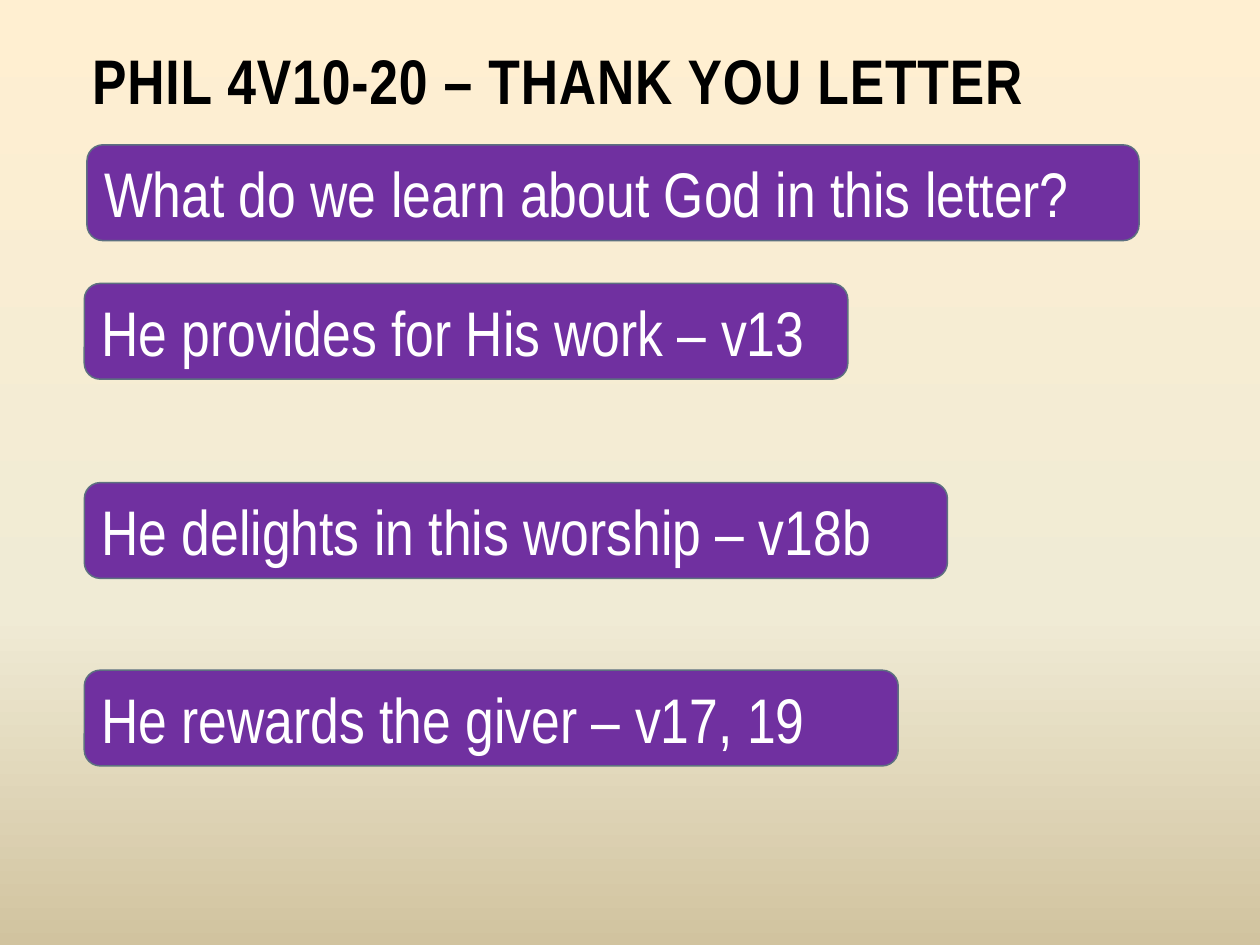
"""Builds the Philippians 4 thank-you letter slide."""
from copy import deepcopy

from pptx import Presentation
from pptx.dml.color import RGBColor as Color
from pptx.enum.shapes import MSO_SHAPE as Shape
from pptx.enum.text import MSO_ANCHOR as Anchor, PP_ALIGN as Align
from pptx.util import Pt

TITLE = "PHIL 4V10-20 – THANK YOU LETTER"
TITLE_BOX = (45.4, 15.1, 624.2, 55.4)
BAR_HEIGHT = 54.7
BARS = [
    ("He provides for His work – v13", 48.2, 162, 436.3),
    ("What do we learn about God in this letter?", 49.7, 82.8, 601.2),
    ("He rewards the giver – v17, 19", 48.2, 383, 465.1),
    ("He delights in this worship – v18b", 48.2, 275.8, 493.2),
]
THEME = {
    "background": [(0, "FFEFD1"), (0.65, "F0EBD5"), (1, "D1C39F")],
    "bar": Color.from_string("7030A0"),
    "outline": Color.from_string("5D7080"),
    "outline_width": Pt(0.85),
    "title_font": {"name": "Arial Narrow", "size": Pt(36), "bold": True},
    "title_color": Color.from_string("000000"),
    "title_spacing": "50",
    "bar_font": {"name": "Arial Narrow", "size": Pt(36), "bold": False},
    "bar_color": Color.from_string("FFFFFF"),
}


def paint_background(slide):
    fill = slide.background.fill
    fill.gradient()
    fill.gradient_angle = 270
    last_stop = fill.gradient_stops[-1]._gs
    last_stop.addprevious(deepcopy(last_stop))
    for stop, (position, color) in zip(fill.gradient_stops, THEME["background"]):
        stop.position = position
        stop.color.rgb = Color.from_string(color)


def write_text(shape, text, anchor, font_values, color):
    frame = shape.text_frame
    frame.word_wrap = True
    frame.vertical_anchor = anchor
    paragraph = frame.paragraphs[0]
    paragraph.alignment = Align.LEFT
    run = paragraph.add_run()
    run.text = text
    for name, value in font_values.items():
        setattr(run.font, name, value)
    run.font.color.rgb = color
    return run


def add_title(slide):
    title = slide.shapes.title
    for name, value in zip(("left", "top", "width", "height"), TITLE_BOX):
        setattr(title, name, Pt(value))
    run = write_text(title, TITLE, Anchor.BOTTOM,
                     THEME["title_font"], THEME["title_color"])
    run._r.get_or_add_rPr().set("spc", THEME["title_spacing"])


def add_bar(slide, text, left, top, width):
    bar = slide.shapes.add_shape(Shape.ROUNDED_RECTANGLE, Pt(left), Pt(top),
                                 Pt(width), Pt(BAR_HEIGHT))
    bar.shadow.inherit = False
    bar.fill.solid()
    bar.fill.fore_color.rgb = THEME["bar"]
    bar.line.color.rgb = THEME["outline"]
    bar.line.width = THEME["outline_width"]
    write_text(bar, text, Anchor.MIDDLE, THEME["bar_font"], THEME["bar_color"])


def main():
    presentation = Presentation()
    presentation.slide_width, presentation.slide_height = Pt(720), Pt(540)
    slide = presentation.slides.add_slide(presentation.slide_layouts[5])
    paint_background(slide)
    add_title(slide)
    for bar in BARS:
        add_bar(slide, *bar)
    presentation.save("out.pptx")


if __name__ == "__main__":
    main()
